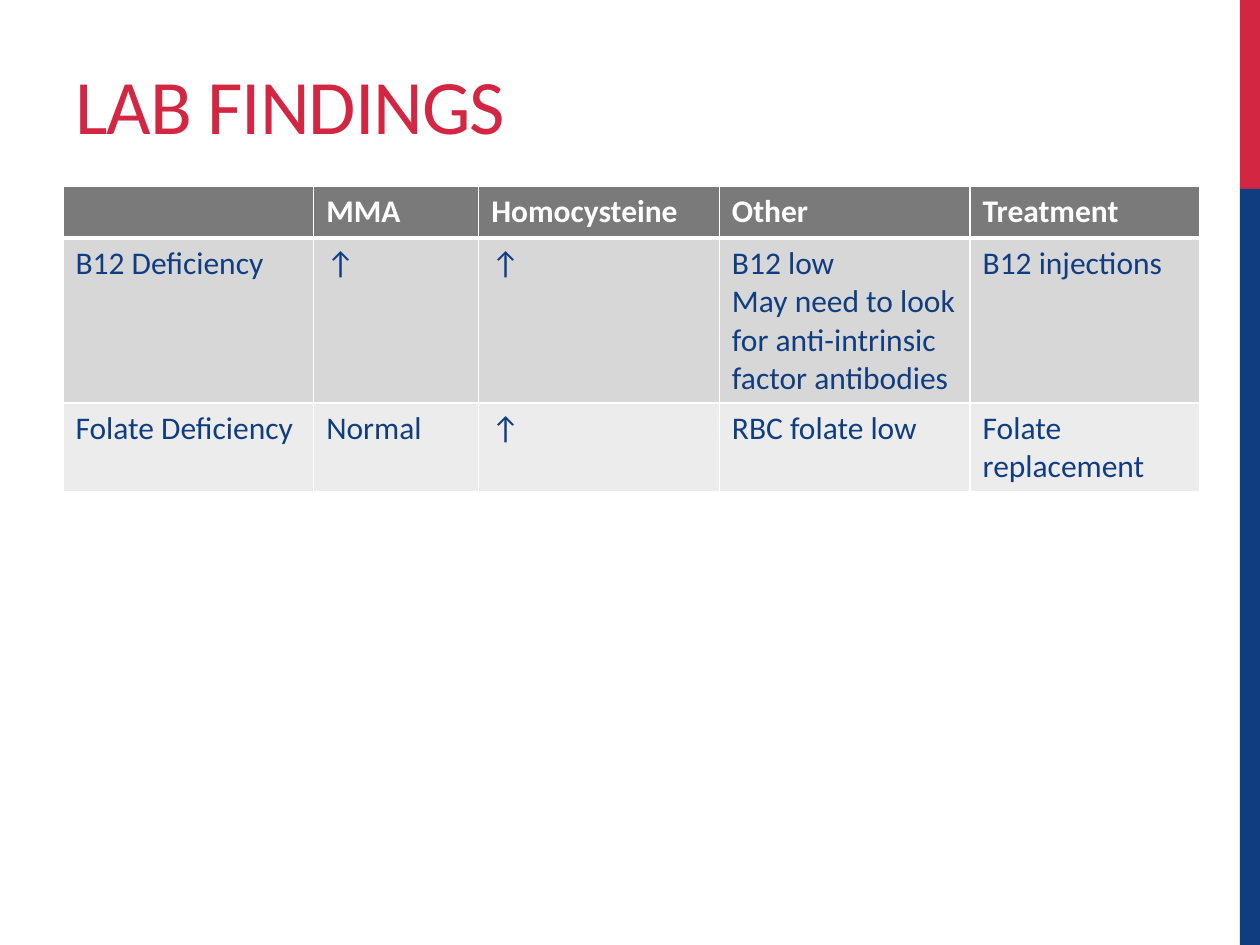
from dataclasses import dataclass

from lxml.etree import SubElement
from pptx import Presentation
from pptx.dml.color import RGBColor
from pptx.enum.shapes import MSO_SHAPE as Preset
from pptx.enum.text import MSO_ANCHOR as Anchor
from pptx.oxml.ns import qn
from pptx.util import Inches, Pt

RED = RGBColor(0xD2, 0x26, 0x43)
BLUE = RGBColor(0x10, 0x3D, 0x80)
WHITE = RGBColor(0xFF, 0xFF, 0xFF)
HEADER_GRAY = RGBColor(0x7A, 0x7A, 0x7A)
MID_GRAY = RGBColor(0xD7, 0xD7, 0xD7)
LIGHT_GRAY = RGBColor(0xEC, 0xEC, 0xEC)
FONT = "Calibri"
COLUMN_WIDTHS = (1.99, 1.31, 1.91, 1.99, 1.82)


@dataclass(frozen=True)
class SideBar:
    top: float
    height: float
    color: RGBColor


@dataclass(frozen=True)
class TableRow:
    height: float
    fill: RGBColor
    color: RGBColor
    texts: tuple[str, ...]
    bold: bool = False
    top_line: float = 1
    bottom_line: float = 1


SIDE_BARS = (SideBar(0, 1.5, RED), SideBar(1.5, 6, BLUE))
ROWS = (
    TableRow(0.41, HEADER_GRAY, WHITE,
             ("", "MMA", "Homocysteine", "Other", "Treatment"),
             bold=True, bottom_line=3),
    TableRow(1.31, MID_GRAY, BLUE,
             ("B12 Deficiency", "↑", "↑",
              "B12 low\nMay need to look for anti-intrinsic factor antibodies",
              "B12 injections"),
             top_line=3),
    TableRow(0.69, LIGHT_GRAY, BLUE,
             ("Folate Deficiency", "Normal", "↑", "RBC folate low",
              "Folate replacement")),
)


def add_span(para, text: str, size: float, color: RGBColor, bold: bool = False):
    span = para.add_run()
    span.text = text
    span.font.name = FONT
    span.font.size = Pt(size)
    span.font.bold = bold
    span.font.color.rgb = color
    return span


def add_side_bar(page, bar: SideBar) -> None:
    shape = page.shapes.add_shape(
        Preset.RECTANGLE, Inches(9.84), Inches(bar.top), Inches(0.16), Inches(bar.height))
    shape.shadow.inherit = False
    shape.fill.solid()
    shape.fill.fore_color.rgb = bar.color
    shape.line.fill.background()


def add_title(page, text: str) -> None:
    box = page.shapes.add_textbox(Inches(0.5), Inches(0.17), Inches(5.46), Inches(1.07))
    frame = box.text_frame
    frame.word_wrap = True
    frame.vertical_anchor = Anchor.BOTTOM
    span = add_span(frame.paragraphs[0], text, 44, RED)
    span.font._element.set("spc", "-60")


def set_borders(cell, row: TableRow) -> None:
    properties = cell._tc.get_or_add_tcPr()
    widths = {"a:lnL": 1, "a:lnR": 1, "a:lnT": row.top_line, "a:lnB": row.bottom_line}
    for tag, width in widths.items():
        line = SubElement(properties, qn(tag), w=str(Pt(width)))
        fill = SubElement(line, qn("a:solidFill"))
        SubElement(fill, qn("a:srgbClr"), val=str(WHITE))


def fill_cell(cell, text: str, row: TableRow) -> None:
    set_borders(cell, row)
    cell.fill.solid()
    cell.fill.fore_color.rgb = row.fill
    frame = cell.text_frame
    for index, line in enumerate(text.splitlines()):
        para = frame.add_paragraph() if index else frame.paragraphs[0]
        add_span(para, line, 18, row.color, row.bold)


def add_findings_table(page) -> None:
    table = page.shapes.add_table(
        len(ROWS), len(COLUMN_WIDTHS), Inches(0.5), Inches(1.48),
        Inches(sum(COLUMN_WIDTHS)), Inches(sum(row.height for row in ROWS))).table
    for column, width in zip(table.columns, COLUMN_WIDTHS):
        column.width = Inches(width)
    for table_row, row in zip(table.rows, ROWS):
        table_row.height = Inches(row.height)
        for cell, text in zip(table_row.cells, row.texts):
            fill_cell(cell, text, row)


def main() -> None:
    deck = Presentation()
    deck.slide_width, deck.slide_height = Inches(10), Inches(7.5)
    page = deck.slides.add_slide(deck.slide_layouts[6])
    for bar in SIDE_BARS:
        add_side_bar(page, bar)
    add_title(page, "LAB FINDINGS")
    add_findings_table(page)
    deck.save("out.pptx")


if __name__ == "__main__":
    main()
